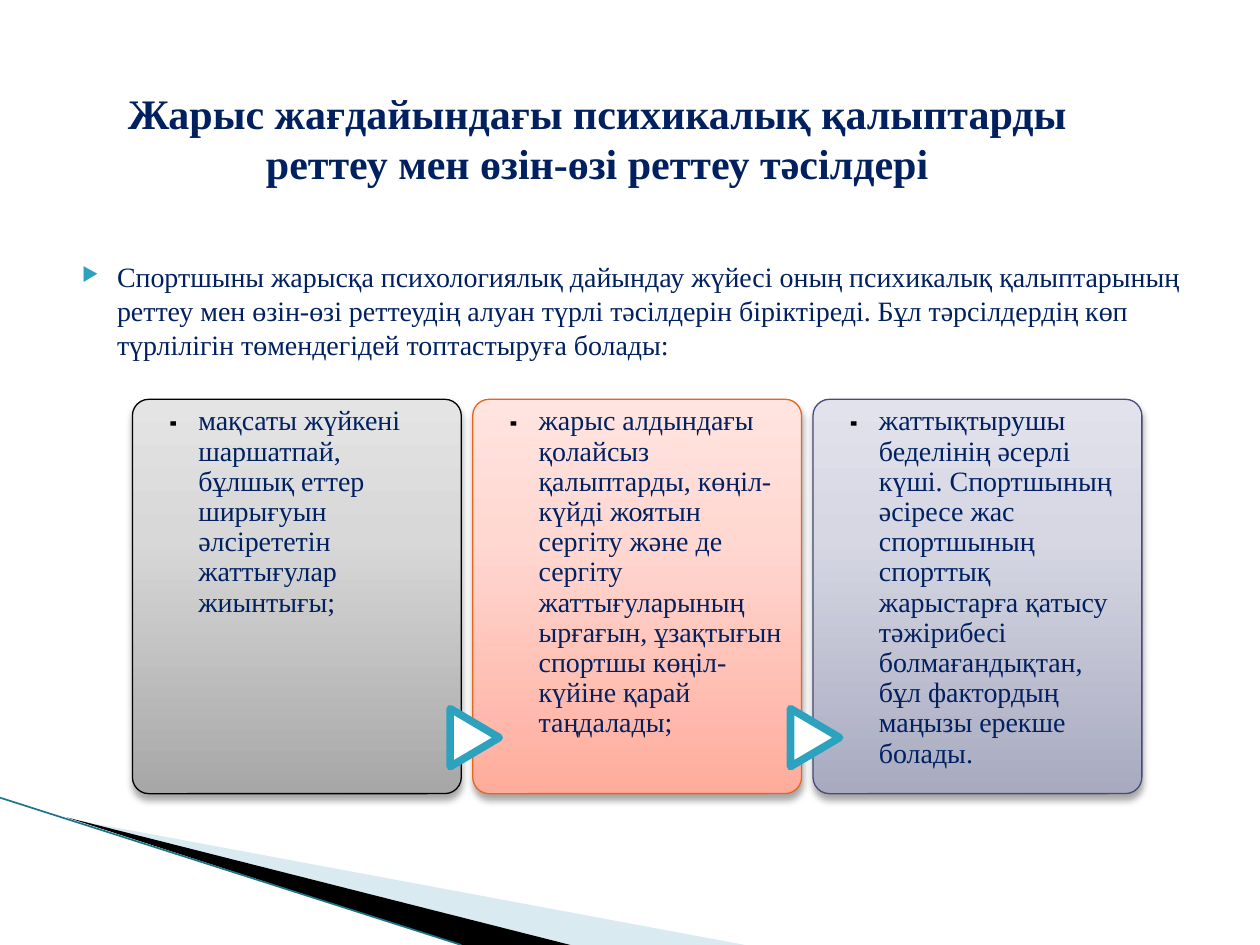
from dataclasses import dataclass

from lxml import etree
from pptx import Presentation
from pptx.dml.color import RGBColor
from pptx.enum.shapes import MSO_CONNECTOR, MSO_SHAPE as SHAPE
from pptx.enum.text import MSO_ANCHOR as ANCHOR, MSO_AUTO_SIZE, PP_ALIGN as ALIGN
from pptx.oxml import parse_xml
from pptx.oxml.ns import nsdecls, qn
from pptx.util import Cm, Pt


@dataclass(frozen=True)
class Theme:
    navy: str = "002060"
    teal: str = "2DA2BF"
    edge: str = "1C7489"
    pale: str = "A0CBDC"
    black: str = "000000"
    white: str = "FFFFFF"
    serif: str = "Times New Roman"
    mono: str = "Courier New"
    title: int = 24
    body: int = 16
    mark: int = 22


T = Theme()

TITLE = "Жарыс жағдайындағы психикалық қалыптарды реттеу мен өзін-өзі реттеу тәсілдері"
INTRO = ("Спортшыны жарысқа психологиялық дайындау жүйесі оның психикалық қалыптарының "
         "реттеу мен өзін-өзі реттеудің алуан түрлі тәсілдерін біріктіреді. Бұл "
         "тәрсілдердің көп түрлілігін төмендегідей топтастыруға болады:")
# Text, outline colour, gradient from bottom to top
CARDS = [
    ("мақсаты жүйкені шаршатпай, бұлшық еттер ширығуын әлсірететін жаттығулар жиынтығы;",
     "000000", ("A7A7A7", "D8D8D8", "E4E4E4")),
    ("жарыс алдындағы қолайсыз қалыптарды, көңіл-күйді жоятын сергіту және де сергіту "
     "жаттығуларының ырғағын, ұзақтығын спортшы көңіл-күйіне қарай таңдалады;",
     "EB641B", ("FFAC9C", "FFD8D2", "FFE4DF")),
    ("жаттықтырушы беделінің әсерлі күші. Спортшының әсіресе жас спортшының спорттық "
     "жарыстарға қатысу тәжірибесі болмағандықтан, бұл фактордың маңызы ерекше болады.",
     "474B78", ("A8AAC0", "D6D7E3", "E2E2EC")),
]


def rgb(value):
    return RGBColor.from_string(value)


def add_text(tf, text, size, color=T.navy, font=T.serif, bold=False):
    p = tf.paragraphs[0]
    r = p.add_run()
    r.text = text
    r.font.size, r.font.name, r.font.bold = Pt(size), font, bold
    r.font.color.rgb = rgb(color)
    return p


def add_box(slide, x, y, w, h, insets=(0.25, 0.13, 0.25, 0.13)):
    sp = slide.shapes.add_textbox(Cm(x), Cm(y), Cm(w), Cm(h))
    tf = sp.text_frame
    tf.word_wrap = True
    tf.margin_left, tf.margin_top, tf.margin_right, tf.margin_bottom = map(Cm, insets)
    return sp


def set_gradient(sp, colors):
    stops = "".join(f'<a:gs pos="{pos}000"><a:srgbClr val="{c}"/></a:gs>'
                    for pos, c in zip((0, 65, 100), colors))
    sp.fill.background()
    old = sp._element.spPr.find(qn("a:noFill"))
    old.getparent().replace(old, parse_xml(
        f'<a:gradFill {nsdecls("a")} rotWithShape="1"><a:gsLst>{stops}</a:gsLst>'
        '<a:lin ang="16200000" scaled="0"/></a:gradFill>'))


def set_shadow(sp):
    sp.shadow.inherit = False
    sp._element.spPr.find(qn("a:effectLst")).append(parse_xml(
        f'<a:outerShdw {nsdecls("a")} blurRad="{Pt(4)}" dist="{Pt(3)}" dir="5400000" '
        'rotWithShape="0"><a:srgbClr val="000000"><a:alpha val="35000"/></a:srgbClr>'
        '</a:outerShdw>'))


def add_wedge(slide, points, color, alpha=100):
    (x, y), *rest = [(Cm(px), Cm(py)) for px, py in points]
    builder = slide.shapes.build_freeform(x, y)
    builder.add_line_segments(rest, close=True)
    sp = builder.convert_to_shape()
    sp.shadow.inherit = False
    sp.fill.solid()
    sp.fill.fore_color.rgb = rgb(color)
    sp.line.fill.background()
    if alpha < 100:
        clr = sp._element.spPr.find(f".//{qn('a:srgbClr')}")
        etree.SubElement(clr, qn("a:alpha")).set("val", f"{alpha}000")


def add_corner(slide, bottom):
    """Wedges and edge line that end on the bottom of the slide."""
    add_wedge(slide, [(1.4, bottom - 2.54), (15.02, bottom), (11.5, bottom)], T.pale, 40)
    add_wedge(slide, [(1.35, bottom - 2.57), (11.5, bottom), (9.28, bottom)], T.black)
    line = slide.shapes.add_connector(MSO_CONNECTOR.STRAIGHT, 0, Cm(bottom - 2.97),
                                      Cm(9.3), Cm(bottom))
    line.line.color.rgb = rgb(T.edge)
    line.line.width = Pt(0.95)
    etree.SubElement(line._element.spPr, qn("a:effectLst"))


def add_title(slide, x, y, w, h):
    sp = slide.shapes.title
    sp.left, sp.top, sp.width, sp.height = Cm(x), Cm(y), Cm(w), Cm(h)
    tf = sp.text_frame
    tf.auto_size = MSO_AUTO_SIZE.NONE
    tf.vertical_anchor = ANCHOR.MIDDLE
    add_text(tf, TITLE, T.title, bold=True).alignment = ALIGN.CENTER


def add_intro(slide, x, y, w, h):
    p = add_text(add_box(slide, x, y, w, h).text_frame, INTRO, T.body)
    pPr = p._p.get_or_add_pPr()
    pPr.set("marL", str(Cm(1.02)))
    pPr.set("indent", str(Cm(-0.71)))
    color = etree.SubElement(pPr, qn("a:buClr"))
    etree.SubElement(color, qn("a:srgbClr")).set("val", T.teal)
    etree.SubElement(pPr, qn("a:buSzPct")).set("val", "68000")
    etree.SubElement(pPr, qn("a:buChar")).set("char", "▶")


def add_arrow(slide, cx, cy, w=1.17, h=0.99):
    sp = slide.shapes.add_shape(SHAPE.FLOWCHART_EXTRACT, Cm(cx - w / 2), Cm(cy - h / 2),
                                Cm(w), Cm(h))
    sp.rotation = 90
    sp.shadow.inherit = False
    sp.fill.solid()
    sp.fill.fore_color.rgb = rgb(T.white)
    sp.line.color.rgb = rgb(T.teal)
    sp.line.width = Pt(4.33)


def add_card(slide, x, y, w, h, text, outline, colors, arrow):
    card = slide.shapes.add_shape(SHAPE.ROUNDED_RECTANGLE, Cm(x), Cm(y), Cm(w), Cm(h))
    card.adjustments[0] = 0.05
    set_gradient(card, colors)
    card.line.color.rgb = rgb(outline)
    card.line.width = Pt(0.75)
    set_shadow(card)

    # Upright strip with the dot mark
    strip_w, strip_h = 6.53, 1.32
    strip = add_box(slide, x + 0.67 - strip_w / 2, y + 3.25 - strip_h / 2,
                    strip_w, strip_h, (0, 0.2, 0.28, 0))
    strip.rotation = 270
    p = add_text(strip.text_frame, ".", T.mark, T.black, T.mono)
    p.alignment, p.line_spacing = ALIGN.RIGHT, 0.9

    if arrow:
        add_arrow(slide, x + 0.04, y + 6.82)
    box = add_box(slide, x + 1.33, y, 4.93, h, (0, 0.15, 0, 0))
    add_text(box.text_frame, text, T.body).line_spacing = 0.9


def add_cards(slide, x, y, w, h, gap=0.23):
    card_w = (w - gap * (len(CARDS) - 1)) / len(CARDS)
    for i, card in enumerate(CARDS):
        add_card(slide, x + i * (card_w + gap), y, card_w, h, *card, arrow=i > 0)


def main():
    prs = Presentation()
    prs.slide_width, prs.slide_height = Cm(25.4), Cm(19.05)
    slide = prs.slides.add_slide(prs.slide_layouts[5])
    add_corner(slide, 19.05)
    add_title(slide, 1.09, 0.94, 21.9, 3.68)
    add_intro(slide, 1.09, 5.11, 23.42, 12.09)
    add_cards(slide, 2.67, 8.05, 20.35, 7.95)
    prs.save("out.pptx")


if __name__ == "__main__":
    main()
